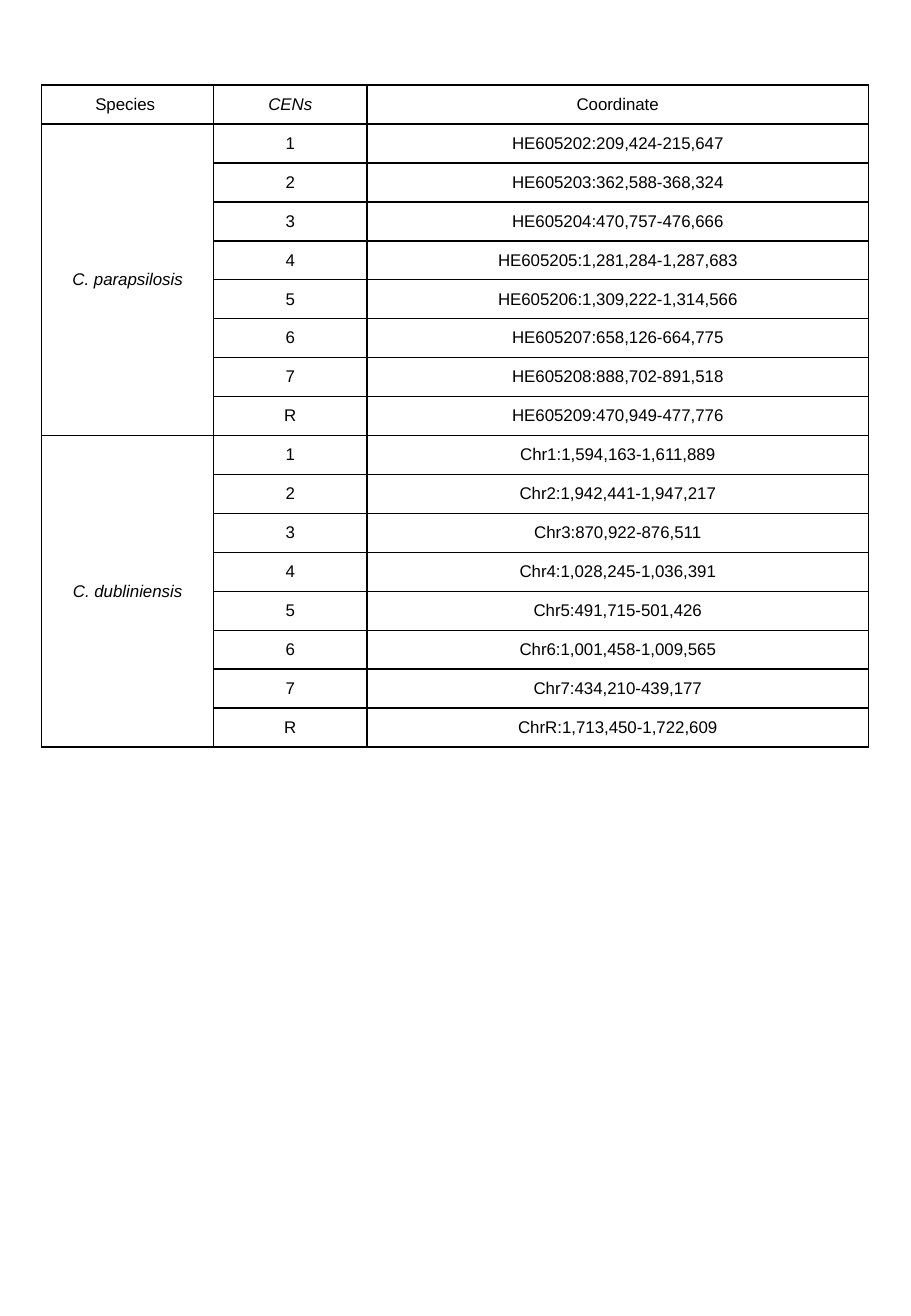
from lxml.etree import SubElement
from pptx import Presentation
from pptx.dml.color import RGBColor
from pptx.enum.text import MSO_ANCHOR, PP_ALIGN
from pptx.oxml.ns import qn
from pptx.util import Inches, Pt

COLORS = {"ink": "000000", "paper": "FFFFFF"}
HEADERS = ["Species ", "CENs", "Coordinate"]
COLUMN_WIDTHS = [1.42, 1.26, 4.13]
CENTROMERES = "1234567R"
COORDINATES = {
    "C. parapsilosis": [
        "HE605202:209,424-215,647",
        "HE605203:362,588-368,324",
        "HE605204:470,757-476,666",
        "HE605205:1,281,284-1,287,683",
        "HE605206:1,309,222-1,314,566",
        "HE605207:658,126-664,775",
        "HE605208:888,702-891,518",
        "HE605209:470,949-477,776",
    ],
    "C. dubliniensis": [
        "Chr1:1,594,163-1,611,889",
        "Chr2:1,942,441-1,947,217",
        "Chr3:870,922-876,511",
        "Chr4:1,028,245-1,036,391",
        "Chr5:491,715-501,426",
        "Chr6:1,001,458-1,009,565",
        "Chr7:434,210-439,177",
        "ChrR:1,713,450-1,722,609",
    ],
}


def add_borders(cell):
    properties = cell._tc.get_or_add_tcPr()
    for side in ("a:lnL", "a:lnR", "a:lnT", "a:lnB"):
        line = SubElement(properties, qn(side), w=str(Pt(1)))
        fill = SubElement(line, qn("a:solidFill"))
        SubElement(fill, qn("a:srgbClr"), val=COLORS["ink"])


def style_cell(cell, margin=0.13):
    add_borders(cell)
    cell.fill.solid()
    cell.fill.fore_color.rgb = RGBColor.from_string(COLORS["paper"])
    cell.vertical_anchor = MSO_ANCHOR.MIDDLE
    cell.margin_left = cell.margin_right = Inches(margin)
    cell.margin_top = cell.margin_bottom = Inches(0.05)


def write_cell(cell, text, italic=False):
    cell.text = text
    para = cell.text_frame.paragraphs[0]
    para.alignment = PP_ALIGN.CENTER
    para.font.name = "Arial"
    para.font.size = Pt(10)
    para.font.italic = italic
    para.font.color.rgb = RGBColor.from_string(COLORS["ink"])


def add_species(table, first_row, species, coordinates):
    last_row = first_row + len(coordinates) - 1
    table.cell(first_row, 0).merge(table.cell(last_row, 0))
    write_cell(table.cell(first_row, 0), species, italic=True)
    for row, (centromere, coordinate) in enumerate(zip(CENTROMERES, coordinates), first_row):
        write_cell(table.cell(row, 1), centromere)
        write_cell(table.cell(row, 2), coordinate)


def add_centromere_table(page):
    row_count = 1 + len(COORDINATES) * len(CENTROMERES)
    frame = page.shapes.add_table(row_count, len(HEADERS), Inches(0.34), Inches(0.7),
                                  Inches(sum(COLUMN_WIDTHS)), Inches(5.45))
    table = frame.table
    table.first_row = table.horz_banding = False
    for column, width in zip(table.columns, COLUMN_WIDTHS):
        column.width = Inches(width)
    for row in range(row_count):
        for column in range(len(HEADERS)):
            is_species = row > 0 and column == 0
            style_cell(table.cell(row, column), 0.11 if is_species else 0.13)

    # Header row
    for column, header in enumerate(HEADERS):
        write_cell(table.cell(0, column), header, italic=header == "CENs")

    # One block of rows per species
    for index, (species, coordinates) in enumerate(COORDINATES.items()):
        add_species(table, 1 + index * len(CENTROMERES), species, coordinates)


def main():
    deck = Presentation()
    deck.slide_width = Inches(7.5)
    deck.slide_height = Inches(10.83)
    page = deck.slides.add_slide(deck.slide_layouts[6])
    add_centromere_table(page)
    deck.save("out.pptx")


if __name__ == "__main__":
    main()
